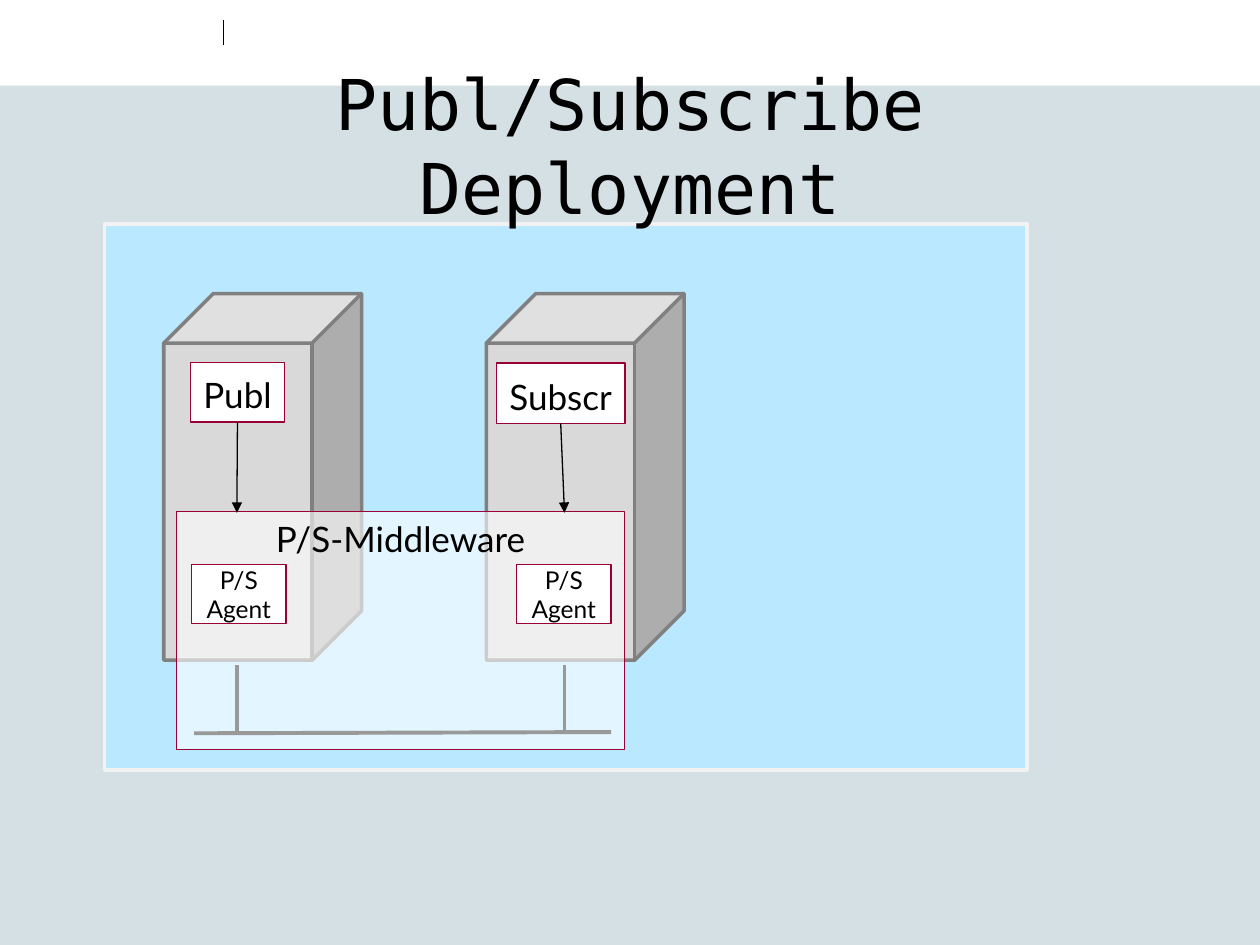
from lxml import etree
from pptx import Presentation
from pptx.dml.color import RGBColor
from pptx.enum.shapes import MSO_CONNECTOR, MSO_SHAPE
from pptx.enum.text import MSO_ANCHOR, PP_ALIGN
from pptx.oxml.ns import qn
from pptx.util import Inches, Pt

RECT, CUBE = MSO_SHAPE.RECTANGLE, MSO_SHAPE.CUBE
TOP, MIDDLE, BOTTOM = MSO_ANCHOR.TOP, MSO_ANCHOR.MIDDLE, MSO_ANCHOR.BOTTOM
BOTTOM_SIDE = 2

BLACK = RGBColor(0x00, 0x00, 0x00)
WHITE = RGBColor(0xFF, 0xFF, 0xFF)
BACKDROP = RGBColor(0xD5, 0xE0, 0xE5)
SKY = RGBColor(0xB9, 0xE8, 0xFF)
PANEL_EDGE = RGBColor(0xF2, 0xF2, 0xF2)
HOST_FILL = RGBColor(0xD9, 0xD9, 0xD9)
HOST_EDGE = RGBColor(0x80, 0x80, 0x80)
CRIMSON = RGBColor(0x99, 0x00, 0x33)

# Content: positions are left, top, width, height in inches
TITLE = "Publ/Subscribe Deployment"
MIDDLEWARE = "P/S-Middleware"
AGENT = "P/S Agent"
HOSTS = [
    {"left": 3.86, "client": "Subscr", "client_at": (3.94, 2.88, 1.02, 0.48),
     "agent_left": 4.1, "cable_x": 4.48},
    {"left": 1.3, "client": "Publ", "client_at": (1.51, 2.88, 0.75, 0.47),
     "agent_left": 1.52, "cable_x": 1.88},
]
MIDDLEWARE_AT = (1.4, 4.06, 3.56, 1.89)
LABEL = {"name": "Lato", "size": Pt(20)}
SMALL_LABEL = {"name": "Lato", "size": Pt(14)}
HEADING = {"name": "DejaVu Sans Mono", "size": Pt(40)}

deck = Presentation()
deck.slide_width, deck.slide_height = Inches(10), Inches(7.5)
page = deck.slides.add_slide(deck.slide_layouts[6])
page.background.fill.solid()
page.background.fill.fore_color.rgb = BACKDROP


def add_box(at, fill, edge=None, width=0, kind=RECT):
    box = page.shapes.add_shape(kind, *map(Inches, at))
    box.shadow.inherit = False
    box.fill.solid()
    box.fill.fore_color.rgb = fill
    if edge is None:
        box.line.fill.background()
    else:
        box.line.color.rgb = edge
        box.line.width = Pt(width)
    return box


def write(box, text, style, anchor):
    frame = box.text_frame
    frame.word_wrap = True
    frame.vertical_anchor = anchor
    para = frame.paragraphs[0]
    para.alignment = PP_ALIGN.CENTER
    span = para.add_run()
    span.text = text
    for key, value in style.items():
        setattr(span.font, key, value)
    span.font.color.rgb = BLACK


def add_label_box(at, text, style, anchor):
    box = add_box(at, WHITE, CRIMSON)
    box.text_frame.margin_left = box.text_frame.margin_right = 0
    write(box, text, style, anchor)
    return box


def add_line(start, end, width, arrow=False):
    line = page.shapes.add_connector(MSO_CONNECTOR.STRAIGHT,
                                     *map(Inches, start + end))
    line.line.color.rgb = BLACK
    line.line.width = Pt(width)
    if arrow:
        etree.SubElement(line.line._get_or_add_ln(), qn("a:tailEnd"),
                         type="triangle")
    etree.SubElement(line._element.spPr, qn("a:effectLst"))
    return line


# Header band and blue panel
add_box((0, 0, 10, 0.68), WHITE)
add_line((1.77, 0.16), (1.77, 0.36), 0.5)
add_box((0.83, 1.78, 7.32, 4.33), SKY, PANEL_EDGE, 2)

# Title
heading = page.shapes.add_textbox(*map(Inches, (0.75, 0.76, 8.5, 0.77)))
write(heading, TITLE, HEADING, MIDDLE)

# Hosts, each with its client and network cable
clients = []
for host in HOSTS:
    add_box((host["left"], 2.33, 1.57, 2.91), HOST_FILL, HOST_EDGE, 2, CUBE)
    clients.append(add_label_box(host["client_at"], host["client"], LABEL, BOTTOM))
    add_line((host["cable_x"], 5.28), (host["cable_x"], 5.8), 2.25)
add_line((4.85, 5.81), (1.54, 5.82), 2.25)

# Translucent middleware layer over the hosts and the network
layer = add_label_box(MIDDLEWARE_AT, MIDDLEWARE, LABEL, TOP)
layer_color = layer._element.spPr.find(qn("a:solidFill"))[0]
etree.SubElement(layer_color, qn("a:alpha"), val="60000")

# Calls from the clients, and the agents inside the middleware
for host, client in zip(HOSTS, clients):
    x = host["cable_x"]
    call = add_line((x, 3.36), (x, 4.07), 0.75, arrow=True)
    call.begin_connect(client, BOTTOM_SIDE)
    add_label_box((host["agent_left"], 4.48, 0.75, 0.47), AGENT, SMALL_LABEL, MIDDLE)

deck.save("out.pptx")
